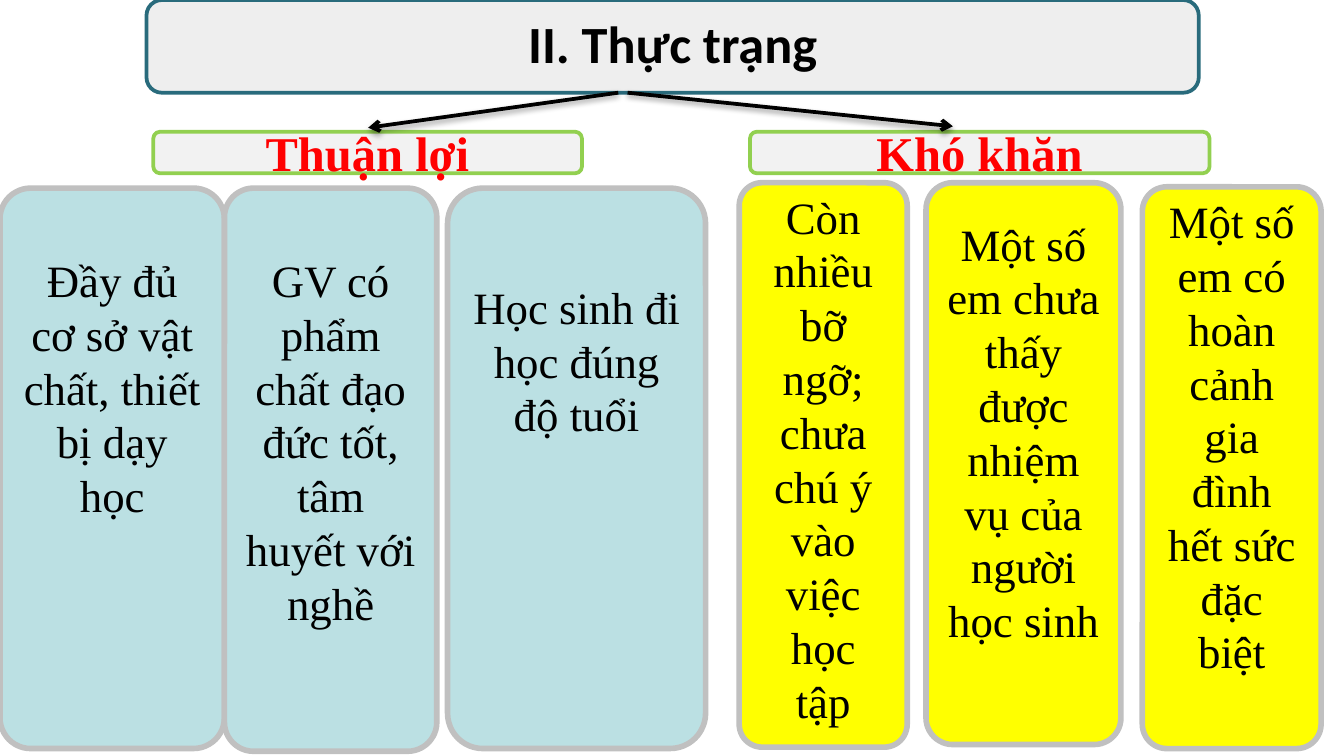
"""Build the slide on the current situation: advantages and difficulties."""
from lxml import etree
from pptx import Presentation
from pptx.dml.color import RGBColor
from pptx.enum import shapes, text
from pptx.oxml import ns
from pptx.util import Inches, Pt

BLACK = RGBColor(0x00, 0x00, 0x00)
RED = RGBColor(0xFF, 0x00, 0x00)
TEAL = RGBColor(0x29, 0x6B, 0x7C)
GREEN = RGBColor(0x92, 0xD0, 0x50)
PALE = RGBColor(0xEE, 0xEE, 0xEE)
LIGHT = RGBColor(0xF2, 0xF2, 0xF2)
SILVER = RGBColor(0xC0, 0xC0, 0xC0)
BLUE = RGBColor(0xBB, 0xE0, 0xE3)
YELLOW = RGBColor(0xFF, 0xFF, 0x00)

SERIF = "Times New Roman"
CORNER = 0.137
CORNER_INSET = 0.29 * CORNER
SIDE_MARGIN = 0.09

TITLE = ("II. Thực trạng", (1.09, 0, 7.83, 0.69))
HEADINGS = [
    ("Thuận lợi", (1.14, 0.98, 3.19, 0.31)),
    ("Khó khăn", (5.58, 0.98, 3.42, 0.31)),
]
ARROWS = [((4.6, 0.69), (2.74, 0.95)), ((4.67, 0.69), (7.09, 0.94))]
COLUMNS = [
    ("Đầy đủ cơ sở vật chất, thiết bị dạy học", BLUE, (0, 1.4, 1.67, 4.17), 1.88),
    ("GV có phẩm chất đạo đức tốt, tâm huyết với nghề", BLUE, (1.67, 1.4, 1.58, 4.19), 1.88),
    ("Học sinh đi học đúng độ tuổi", BLUE, (3.33, 1.4, 1.92, 4.17), 2.08),
    ("Còn nhiều bỡ ngỡ; chưa chú ý vào việc học tập", YELLOW, (5.5, 1.36, 1.25, 4.2), 1.4),
    ("Một số em chưa thấy được nhiệm vụ của người học sinh", YELLOW, (6.89, 1.36, 1.45, 4.18), 1.61),
    ("Một số em có hoàn cảnh gia đình hết sức đặc biệt", YELLOW, (8.5, 1.39, 1.33, 4.18), 1.43),
]


def add_box(s, kind, box, words, fill, line, width, font, size, color=BLACK, bold=False):
    sp = s.shapes.add_shape(kind, *map(Inches, box))
    sp.shadow.inherit = False
    sp.fill.solid()
    sp.fill.fore_color.rgb = fill
    sp.line.color.rgb = line
    sp.line.width = Pt(width)
    tf = sp.text_frame
    tf.word_wrap = True
    tf.vertical_anchor = text.MSO_ANCHOR.MIDDLE
    p = tf.paragraphs[0]
    p.text = words
    p.alignment = text.PP_ALIGN.CENTER
    p.font.name = font
    p.font.size = Pt(size)
    p.font.bold = bold
    p.font.color.rgb = color
    return sp


def add_arrow(s, start, end):
    line = s.shapes.add_connector(
        shapes.MSO_CONNECTOR.STRAIGHT, *map(Inches, start + end))
    line.line.color.rgb = BLACK
    line.line.width = Pt(2)
    etree.SubElement(line.line._get_or_add_ln(), ns.qn("a:tailEnd"), type="arrow")
    effects = etree.SubElement(line._element.spPr, ns.qn("a:effectLst"))
    shadow = etree.SubElement(
        effects, ns.qn("a:outerShdw"), blurRad=str(Pt(3.1)), dist=str(Pt(1.6)),
        dir="5400000", rotWithShape="0")
    color = etree.SubElement(shadow, ns.qn("a:srgbClr"), val=str(BLACK))
    etree.SubElement(color, ns.qn("a:alpha"), val="38000")


def add_column(s, words, fill, box, text_top):
    sp = add_box(s, shapes.MSO_SHAPE.ROUNDED_RECTANGLE, box, words,
                 fill, SILVER, 3, SERIF, 24)
    sp.adjustments[0] = CORNER
    left, top, width, height = box
    tf = sp.text_frame
    tf.vertical_anchor = text.MSO_ANCHOR.TOP
    tf.margin_left = tf.margin_right = Inches(SIDE_MARGIN)
    tf.margin_top = Inches(max(0, text_top - top - CORNER_INSET * width))
    tf.margin_bottom = 0


def main():
    prs = Presentation()
    prs.slide_width = Inches(10)
    prs.slide_height = prs.slide_width * 9 // 16
    s = prs.slides.add_slide(prs.slide_layouts[6])

    words, box = TITLE
    title = add_box(s, shapes.MSO_SHAPE.ROUNDED_RECTANGLE, box, words,
                    PALE, TEAL, 2, "Calibri", 28, bold=True)
    p = title.text_frame.paragraphs[0]
    p.line_spacing = 0.9
    p.space_before = Pt(10)

    for words, box in HEADINGS:
        add_box(s, shapes.MSO_SHAPE.FLOWCHART_ALTERNATE_PROCESS, box, words,
                LIGHT, GREEN, 2, SERIF, 26, RED, True)
    for start, end in ARROWS:
        add_arrow(s, start, end)
    for column in COLUMNS:
        add_column(s, *column)

    prs.save("out.pptx")


if __name__ == "__main__":
    main()
